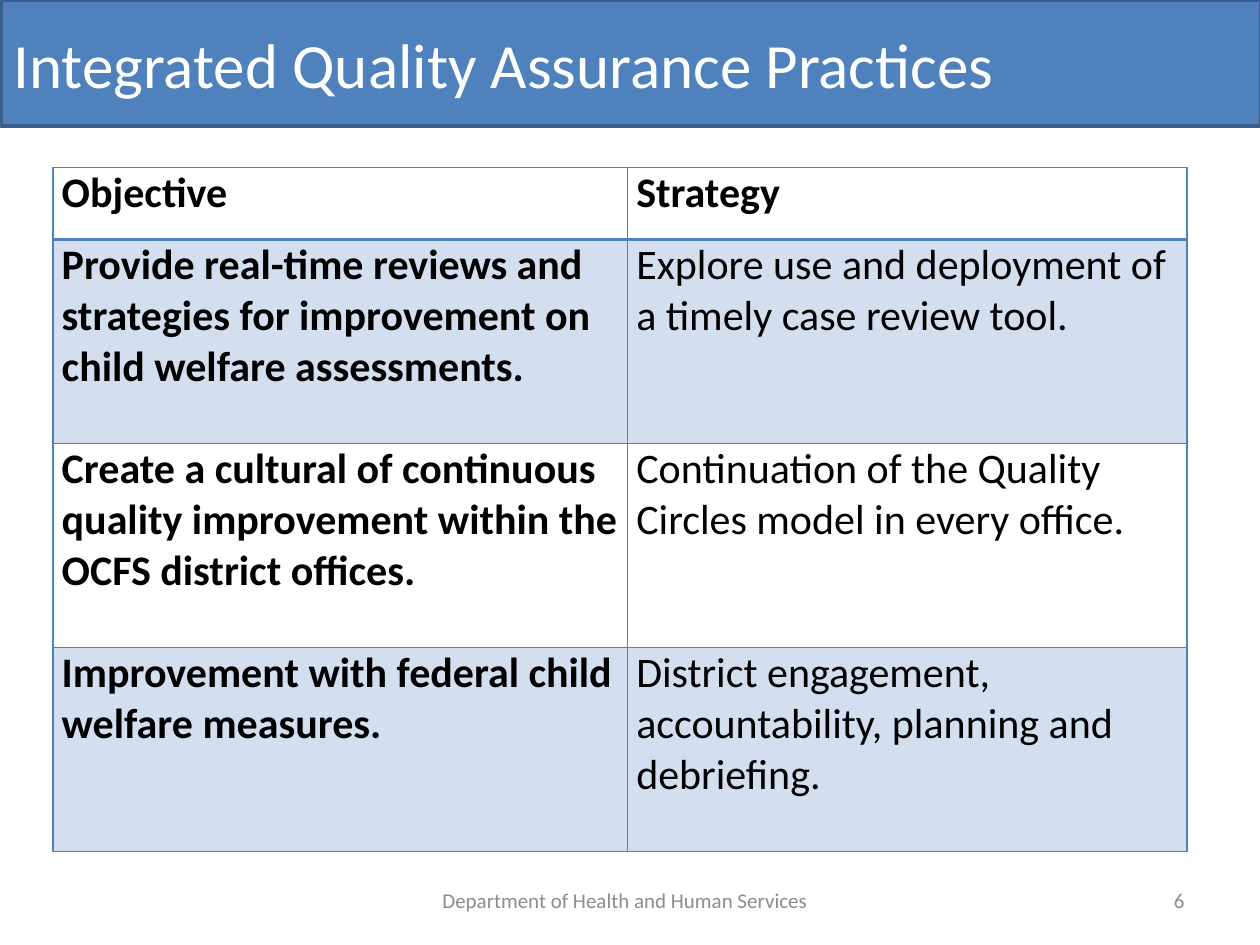
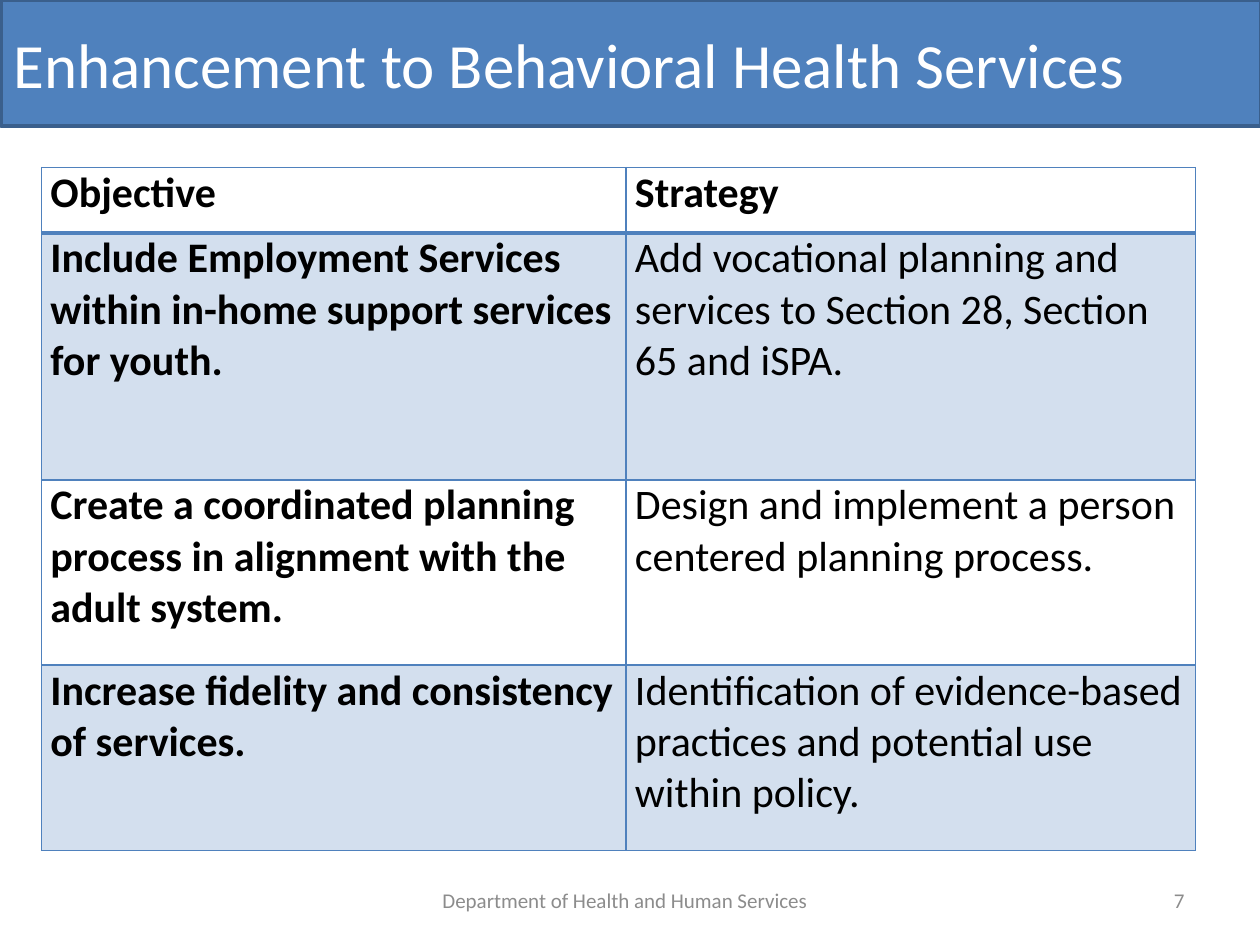
from lxml import etree
from pptx import Presentation
from pptx.dml.color import RGBColor
from pptx.enum.shapes import MSO_SHAPE
from pptx.enum.text import MSO_ANCHOR, PP_ALIGN
from pptx.oxml.ns import qn
from pptx.util import Inches, Pt

BLUE = "4F81BD"
DARK_BLUE = "3A5F8C"
PALE_BLUE = "D3DFEE"
WHITE = "FFFFFF"
BLACK = "000000"
GRAY = "8C8C8C"
FOOTER = "Department of Health and Human Services"
HEADINGS = ("Objective", "Strategy")

PAGES = [
    {
        "number": 6,
        "title": "Integrated Quality Assurance Practices",
        "left": 0.42,
        "columns": [4.56, 4.44],
        "heights": [0.57, 1.62, 1.62, 1.62],
        "rows": [
            ("Provide real-time reviews and strategies for improvement on child welfare assessments.",
             "Explore use and deployment of a timely case review tool."),
            ("Create a cultural of continuous quality improvement within the OCFS district offices.",
             "Continuation of the Quality Circles model in every office."),
            ("Improvement with federal child welfare measures.",
             "District engagement, accountability, planning and debriefing."),
        ],
    },
    {
        "number": 7,
        "title": "Enhancement to Behavioral Health Services",
        "left": 0.33,
        "columns": [4.64, 4.52],
        "heights": [0.52, 1.96, 1.47, 1.47],
        "rows": [
            ("Include Employment Services within in-home support services for youth.",
             "Add vocational planning and services to Section 28, Section 65 and iSPA."),
            ("Create a coordinated planning process in alignment with the adult system.",
             "Design and implement a person centered planning process."),
            ("Increase fidelity and consistency of services.",
             "Identification of evidence-based practices and potential use within policy."),
        ],
    },
]


def color(value):
    return RGBColor.from_string(value)


def write(frame, text, size, text_color, align=PP_ALIGN.LEFT, bold=False):
    """Fill a text frame with one formatted paragraph."""
    frame.text = text
    frame.word_wrap = True
    para = frame.paragraphs[0]
    para.alignment = align
    font = para.runs[0].font
    font.name = "Calibri"
    font.size = Pt(size)
    font.bold = bold
    font.color.rgb = color(text_color)


deck = Presentation()
deck.slide_width = Inches(10)
deck.slide_height = Inches(7.5)

for content in PAGES:
    page = deck.slides.add_slide(deck.slide_layouts[6])

    band = page.shapes.add_shape(
        MSO_SHAPE.RECTANGLE, Inches(0.01), 0, Inches(10), Inches(1))
    band.shadow.inherit = False
    band.fill.solid()
    band.fill.fore_color.rgb = color(BLUE)
    band.line.color.rgb = color(DARK_BLUE)
    band.line.width = Pt(2)
    band.text_frame.vertical_anchor = MSO_ANCHOR.MIDDLE
    write(band.text_frame, content["title"], 36, WHITE)

    for text, left, width, align in (
        (FOOTER, 2.75, 4.42, PP_ALIGN.CENTER),
        (str(content["number"]), 6.92, 2.58, PP_ALIGN.RIGHT),
    ):
        box = page.shapes.add_textbox(
            Inches(left), Inches(6.95), Inches(width), Inches(0.38))
        box.text_frame.vertical_anchor = MSO_ANCHOR.MIDDLE
        write(box.text_frame, text, 12, GRAY, align)

    rows = [HEADINGS] + content["rows"]
    table = page.shapes.add_table(
        len(rows), len(HEADINGS), Inches(content["left"]), Inches(1.33),
        Inches(sum(content["columns"])), Inches(sum(content["heights"]))).table
    for column, width in zip(table.columns, content["columns"]):
        column.width = Inches(width)

    for row_index, row in enumerate(rows):
        table.rows[row_index].height = Inches(content["heights"][row_index])
        for column_index, text in enumerate(row):
            cell = table.cell(row_index, column_index)
            cell.margin_left = cell.margin_right = Inches(0.07)
            cell.margin_top = cell.margin_bottom = 0
            write(cell.text_frame, text, 24, BLACK,
                  bold=row_index == 0 or column_index == 0)

            # The rule between the headings and the first row is heavier.
            heavy_side = {0: "lnB", 1: "lnT"}.get(row_index)
            properties = cell._tc.get_or_add_tcPr()
            for side in ("lnL", "lnR", "lnT", "lnB"):
                weight = Pt(2.25 if side == heavy_side else 1)
                border = etree.SubElement(properties, qn(f"a:{side}"), w=str(weight))
                fill = etree.SubElement(border, qn("a:solidFill"))
                etree.SubElement(fill, qn("a:srgbClr"), val=BLUE)

            if row_index % 2:
                cell.fill.solid()
                cell.fill.fore_color.rgb = color(PALE_BLUE)
            else:
                cell.fill.background()

deck.save("out.pptx")
